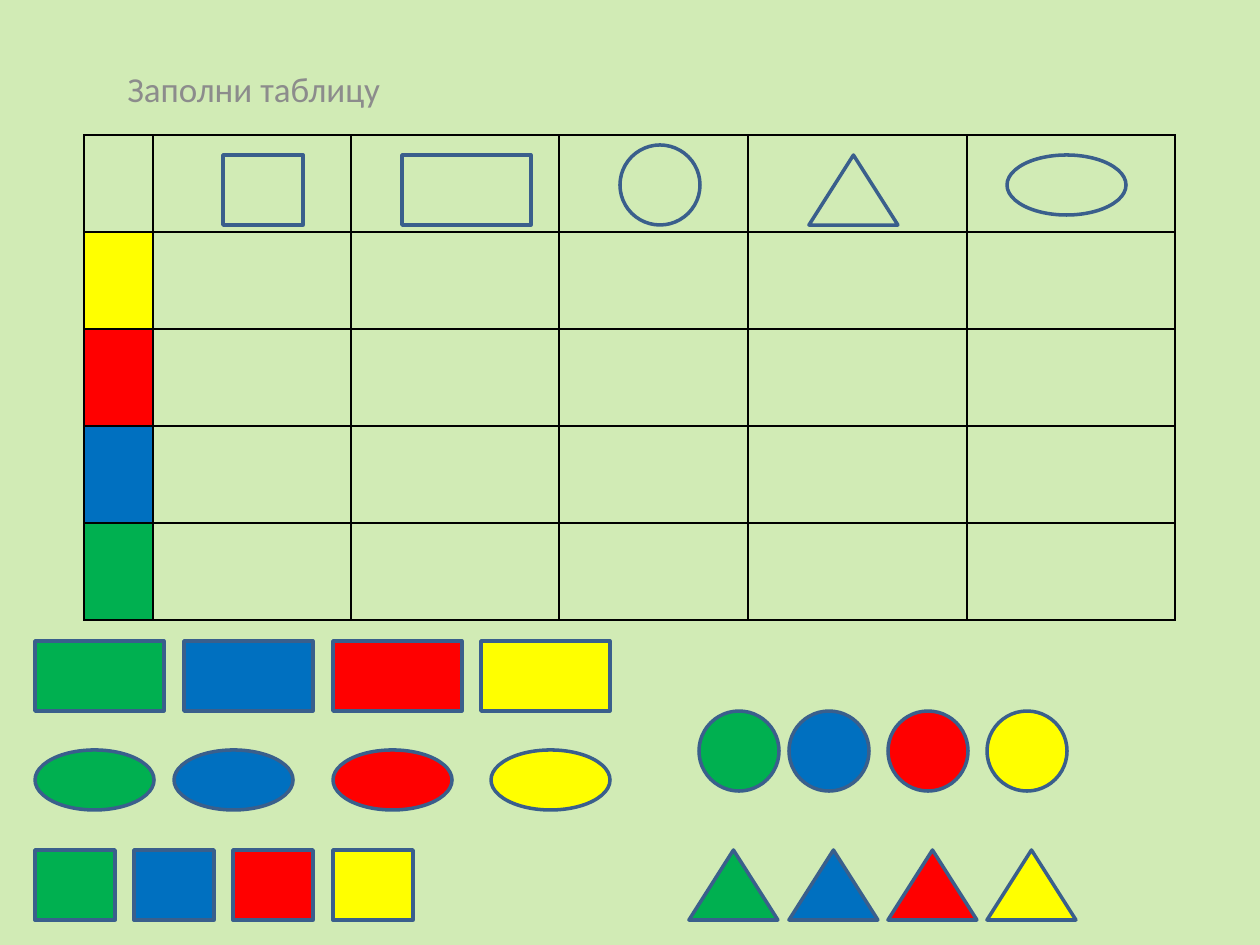
"""Build a worksheet slide: a colour-by-shape table with loose pieces to sort."""
from lxml import etree
from pptx import Presentation
from pptx import util as u
from pptx.dml.color import RGBColor
from pptx.enum import shapes, text
from pptx.oxml import ns

EMU_PER_PX = 914400 / 126
KINDS = shapes.MSO_SHAPE
OUTLINE = "3A5F8C"
GREEN, BLUE, RED, YELLOW = "00B050", "0070C0", "FF0000", "FFFF00"


def px(*lengths):
    return [u.Emu(round(length * EMU_PER_PX)) for length in lengths]


def paint(fill, colour):
    if colour:
        fill.solid()
        fill.fore_color.rgb = RGBColor.from_string(colour)
    else:
        fill.background()


presentation = Presentation()
presentation.slide_width, presentation.slide_height = px(1260, 945)
slide = presentation.slides.add_slide(presentation.slide_layouts[6])
paint(slide.background.fill, "D1EBB5")

title = slide.shapes.add_textbox(*px(115, 16, 1071, 100)).text_frame
frame_format = {"word_wrap": True, "vertical_anchor": text.MSO_ANCHOR.BOTTOM}
for name, value in frame_format.items():
    setattr(title, name, value)
paragraph = title.paragraphs[0]
paragraph.text = "Заполни таблицу"
for name, value in {"name": "Calibri", "size": u.Pt(20)}.items():
    setattr(paragraph.font, name, value)
paint(paragraph.font.fill, "8C8C8C")

column_widths = [69, 198, 208, 189, 219, 208]
row_colours = [None, YELLOW, RED, BLUE, GREEN]
row_height = 97
table = slide.shapes.add_table(
    len(row_colours), len(column_widths),
    *px(84, 135, sum(column_widths), row_height * len(row_colours))).table
table.first_row = table.horz_banding = False
for column, width in zip(table.columns, px(*column_widths)):
    column.width = width
for row, row_colour in zip(table.rows, row_colours):
    row.height = px(row_height)[0]
    for index, cell in enumerate(row.cells):
        properties = cell._tc.get_or_add_tcPr()
        for side in ("a:lnL", "a:lnR", "a:lnT", "a:lnB"):
            border = etree.SubElement(properties, ns.qn(side), w=str(u.Pt(1)))
            border_fill = etree.SubElement(border, ns.qn("a:solidFill"))
            etree.SubElement(border_fill, ns.qn("a:srgbClr"), val="000000")
        paint(cell.fill, row_colour if index == 0 else None)

piece_colours = [GREEN, BLUE, RED, YELLOW]
piece_sets = [
    (KINDS.RECTANGLE, 80, 70, (223, 155), 850, [35, 134, 233, 333]),
    (KINDS.RECTANGLE, 129, 70, (402, 155), 641, [35, 184, 333, 481]),
    (KINDS.OVAL, 80, 80, (620, 145), 711, [699, 789, 888, 987]),
    (KINDS.ISOSCELES_TRIANGLE, 89, 70, (809, 155), 850, [689, 789, 888, 987]),
    (KINDS.OVAL, 119, 60, (1007, 155), 750, [35, 174, 333, 491]),
]
for kind, width, height, header_place, top, lefts in piece_sets:
    pieces = [(*header_place, None)]
    pieces += [(left, top, colour) for left, colour in zip(lefts, piece_colours)]
    for left, piece_top, colour in pieces:
        shape = slide.shapes.add_shape(kind, *px(left, piece_top, width, height))
        shape.shadow.inherit = False
        paint(shape.fill, colour)
        paint(shape.line.fill, OUTLINE)
        shape.line.width = u.Pt(2)

presentation.save("out.pptx")
